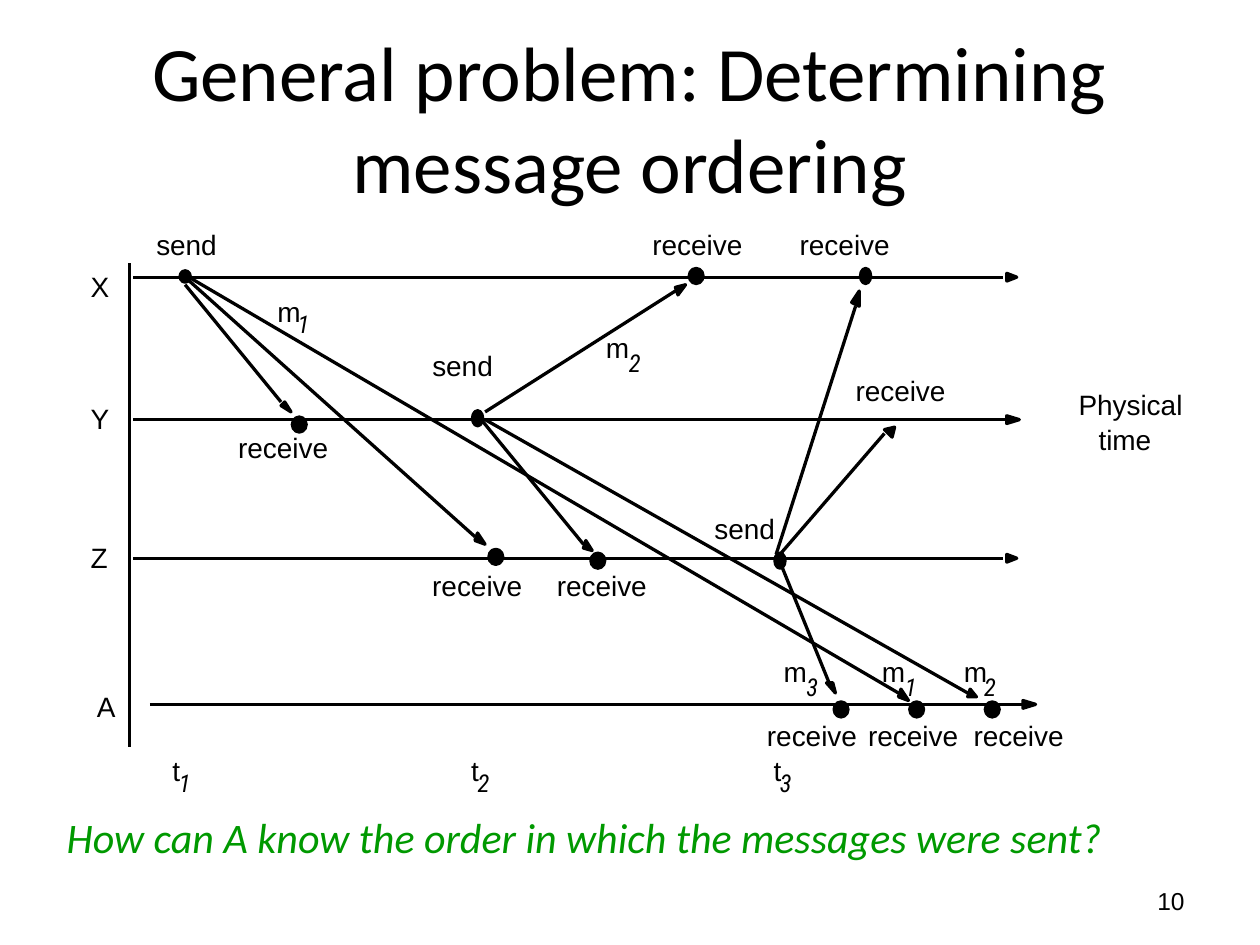
from lxml.etree import SubElement
from pptx import Presentation
from pptx.dml.color import RGBColor
from pptx.enum.shapes import MSO_CONNECTOR as Connector, MSO_SHAPE as Shape
from pptx.enum.text import MSO_ANCHOR as Anchor, PP_ALIGN as Align
from pptx.oxml.ns import qn
from pptx.util import Pt

BLACK, GREEN = "000000", "009900"


def color(value):
    return RGBColor.from_string(value)


class Diagram:
    font, size, line_width = "Arial", 16, 1.88
    sub_font, sub_size = "Roboto Condensed", 14

    def __init__(self, slide):
        self.shapes = slide.shapes

    def text(self, words, left, top, width, height, size=None, font=None, ink=BLACK,
             italic=False, align=Align.LEFT, anchor=Anchor.TOP, inset=(0, 0), wrap=False):
        box = self.shapes.add_textbox(Pt(left), Pt(top), Pt(width), Pt(height))
        frame = box.text_frame
        frame.text = words
        frame.word_wrap = wrap
        frame.vertical_anchor = anchor
        frame.margin_left = frame.margin_right = Pt(inset[0])
        frame.margin_top = frame.margin_bottom = Pt(inset[1])
        para = frame.paragraphs[0]
        para.alignment = align
        for span in para.runs:
            span.font.name = font or self.font
            span.font.size = Pt(size or self.size)
            span.font.italic = italic
            span.font.color.rgb = color(ink)

    def label(self, words, left, top, width=52.6):
        self.text(words, left, top, width, 24.5)

    def indexed(self, letter, index, left, top, shift, drop):
        self.label(letter, left, top, 18.7)
        self.text(index, left + shift, top + drop, 13, 20.2,
                  self.sub_size, self.sub_font, italic=True)

    def line(self, start, end):
        line = self.shapes.add_connector(
            Connector.STRAIGHT, *(Pt(value) for value in (*start, *end)))
        line.line.color.rgb = color(BLACK)
        line.line.width = Pt(self.line_width)
        SubElement(line._element.spPr, qn("a:effectLst"))

    def solid(self, shape):
        shape.shadow.inherit = False
        shape.fill.solid()
        shape.fill.fore_color.rgb = color(BLACK)
        shape.line.color.rgb = color(BLACK)
        shape.line.width = Pt(self.line_width)

    def head(self, *corners):
        first, *others = [(Pt(x), Pt(y)) for x, y in corners]
        builder = self.shapes.build_freeform(*first)
        builder.add_line_segments(others, close=True)
        self.solid(builder.convert_to_shape())

    def dot(self, x, y, width=7.9, height=8.6):
        self.solid(self.shapes.add_shape(
            Shape.OVAL, Pt(x - width / 2), Pt(y - height / 2), Pt(width), Pt(height)))


deck = Presentation()
deck.slide_width, deck.slide_height = Pt(720), Pt(540)
page = deck.slides.add_slide(deck.slide_layouts[6])
diagram = Diagram(page)

# Title, question and page number
diagram.text("General problem: Determining message ordering", 36, 21.6, 648, 90, 44,
             "Calibri", align=Align.CENTER, anchor=Anchor.MIDDLE, inset=(7.2, 3.6), wrap=True)
diagram.text("How can A know the order in which the messages were sent?", 31, 460, 689, 39.6,
             24, "Calibri", GREEN, italic=True, inset=(7.2, 3.6), wrap=True)
diagram.text("10", 516.2, 500.4, 167.8, 28.8, 14, align=Align.RIGHT,
             anchor=Anchor.MIDDLE, inset=(7.2, 3.6), wrap=True)

# Process timelines: name, name position, line start and end, head base and tip, height
TIMELINES = [
    ("X", 51.8, 154.1, 76.3, 573.1, 575.3, 581, 158.4),
    ("Y", 51.8, 229.7, 76.3, 575.3, 575.3, 582.5, 239.8),
    ("Z", 51.8, 308.9, 76.3, 573.1, 575.3, 581, 319),
    ("A", 55.4, 393.8, 85.7, 584.6, 584.6, 591.8, 402.5),
]
for name, left, top, start, end, base, tip, y in TIMELINES:
    diagram.head((base, y - 2.2), (tip, y), (base, y + 2.2))
    diagram.line((start, y), (end, y))
    diagram.label(name, left, top, 16.6)
diagram.line((74.2, 150.5), (74.2, 427))
diagram.label("Physical", 616.3, 221.4, 64.1)
diagram.label("time", 627.8, 241.6, 33.8)

# Messages: start and end of the line, then the corners of the head
MESSAGES = [
    ((105.8, 162.7), (160.6, 229.7), (162.7, 229.7), (166.3, 235.4), (160.6, 231.8)),
    ((105.8, 158.4), (271.4, 306.7), (272.9, 304.6), (277.2, 311), (271.4, 308.9)),
    ((108, 158.4), (513.4, 396), (514.8, 393.8), (519.1, 400.3), (513.4, 398.2)),
    ((277.2, 235.4), (385.9, 166.3), (385.9, 164.2), (391.7, 162.7), (387.4, 168.5)),
    ((275, 239.8), (333.4, 311), (334.8, 308.9), (338.4, 314.6), (333.4, 313.2)),
    ((277.2, 239.8), (553, 396), (554.4, 393.8), (558, 398.2), (553, 398.2)),
    ((443.5, 316.8), (488.9, 175), (486.7, 172.8), (491, 166.3), (491, 175)),
    ((445.7, 316.8), (505.4, 247.7), (505.4, 245.5), (511.2, 244.1), (509.8, 249.8)),
    ((445.7, 321.1), (473.8, 390.2), (475.9, 390.2), (477.4, 396), (472.3, 390.2)),
]
for start, end, *corners in MESSAGES:
    diagram.head(*corners)
    diagram.line(start, end)

# Send events, and the one narrow receive event
diagram.dot(105.8, 158, 5.8, 6.5)
for x, y in [(272.9, 239), (445.7, 320.4), (494.6, 157.7)]:
    diagram.dot(x, y, 5.8)

# Receive events
for x, y in [(397.8, 157.7), (171, 242.6), (283.3, 318.2), (341.6, 320.4)]:
    diagram.dot(x, y)
for step in range(3):
    diagram.dot(480.6 + 43.2 * step, 405.4)

# Event labels
for left, top in [(89.3, 130), (247, 199.1), (408.2, 292.3)]:
    diagram.label("send", left, top, 37.4)
for left, top in [(372.8, 130), (457, 130), (136.1, 245.9), (488.9, 213.5),
                  (247, 324.7), (318.2, 324.7),
                  (438.3, 410.4), (496.1, 410.4), (556.4, 410.4)]:
    diagram.label("receive", left, top)

# Message names and send times
for index, left, top, shift, drop in [
        ("1", 158.6, 168.5, 11.5, 7.9), ("2", 346.3, 189, 13, 10.1),
        ("3", 447.8, 374, 13, 10.1), ("1", 504, 374, 13, 10.1),
        ("2", 550.8, 374, 11.5, 10.1)]:
    diagram.indexed("m", index, left, top, shift, drop)
for index, left in [("1", 98.6), ("2", 269.3), ("3", 442.1)]:
    diagram.indexed("t", index, left, 430.6, 3.6, 8.3)

deck.save("out.pptx")
